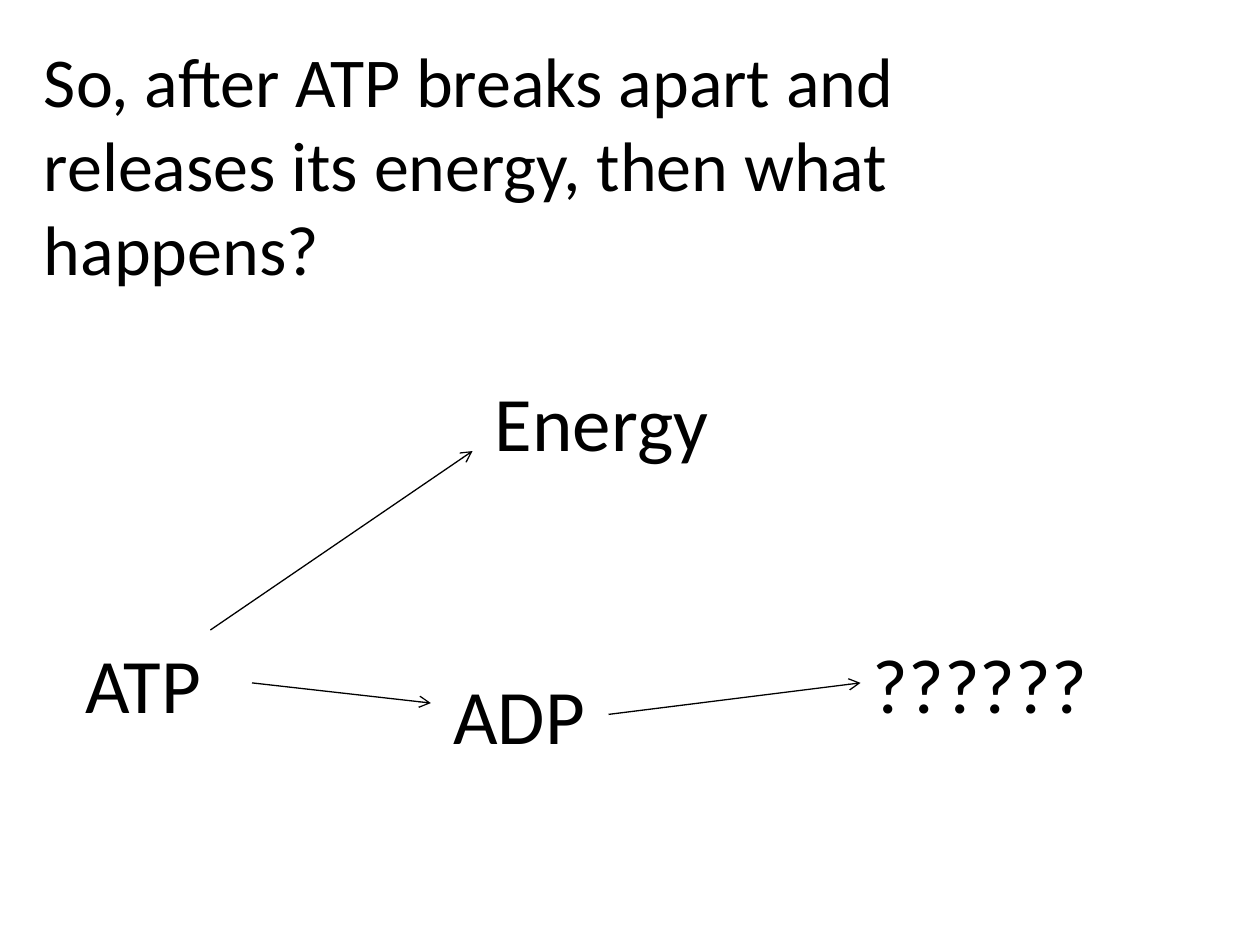
from dataclasses import dataclass

from lxml.etree import SubElement
from pptx import Presentation
from pptx.dml.color import RGBColor
from pptx.enum.shapes import MSO_CONNECTOR
from pptx.enum.text import MSO_AUTO_SIZE
from pptx.oxml.ns import qn
from pptx.util import Inches, Pt


@dataclass(frozen=True)
class Theme:
    font: str = "Calibri"
    ink: RGBColor = RGBColor(0, 0, 0)
    question_size: int = 40
    label_size: int = 44
    line_width: float = 0.75


THEME = Theme()
LABEL_HEIGHT = 0.83

QUESTION = "So, after ATP breaks apart and releases its energy, then what happens?"

# Text, left, top, width
LABELS = [
    ("ATP", 0.58, 5, 1.33),
    ("ADP", 3.5, 5.25, 1.33),
    ("Energy", 3.83, 2.92, 1.92),
    ("??????", 6.83, 5, 2.25),
]

# Start x, start y, end x, end y
ARROWS = [
    (2, 5.42, 3.42, 5.58),  # ATP to ADP
    (1.67, 5, 3.75, 3.58),  # ATP to Energy
    (4.83, 5.67, 6.83, 5.42),  # ADP to ??????
]


def add_text(s, text, left, top, width, height, size):
    box = s.shapes.add_textbox(*map(Inches, (left, top, width, height)))
    tf = box.text_frame
    tf.word_wrap = True
    tf.auto_size = MSO_AUTO_SIZE.SHAPE_TO_FIT_TEXT
    r = tf.paragraphs[0].add_run()
    r.text = text
    for name, value in {"name": THEME.font, "size": Pt(size)}.items():
        setattr(r.font, name, value)
    r.font.color.rgb = THEME.ink


def add_arrow(s, *ends):
    arrow = s.shapes.add_connector(MSO_CONNECTOR.STRAIGHT, *map(Inches, ends))
    arrow.line.color.rgb = THEME.ink
    arrow.line.width = Pt(THEME.line_width)
    # Open arrowhead at the end, and no shadow
    SubElement(arrow.line._get_or_add_ln(), qn("a:tailEnd"), type="arrow")
    SubElement(arrow._element.spPr, qn("a:effectLst"))


def main():
    prs = Presentation()
    prs.slide_width, prs.slide_height = Inches(10), Inches(7.5)
    s = prs.slides.add_slide(prs.slide_layouts[6])

    # Question
    add_text(s, QUESTION, 0.25, 0.25, 7.75, 2.1, THEME.question_size)

    # Reaction diagram
    for text, left, top, width in LABELS:
        add_text(s, text, left, top, width, LABEL_HEIGHT, THEME.label_size)
    for ends in ARROWS:
        add_arrow(s, *ends)

    prs.save("out.pptx")


if __name__ == "__main__":
    main()
